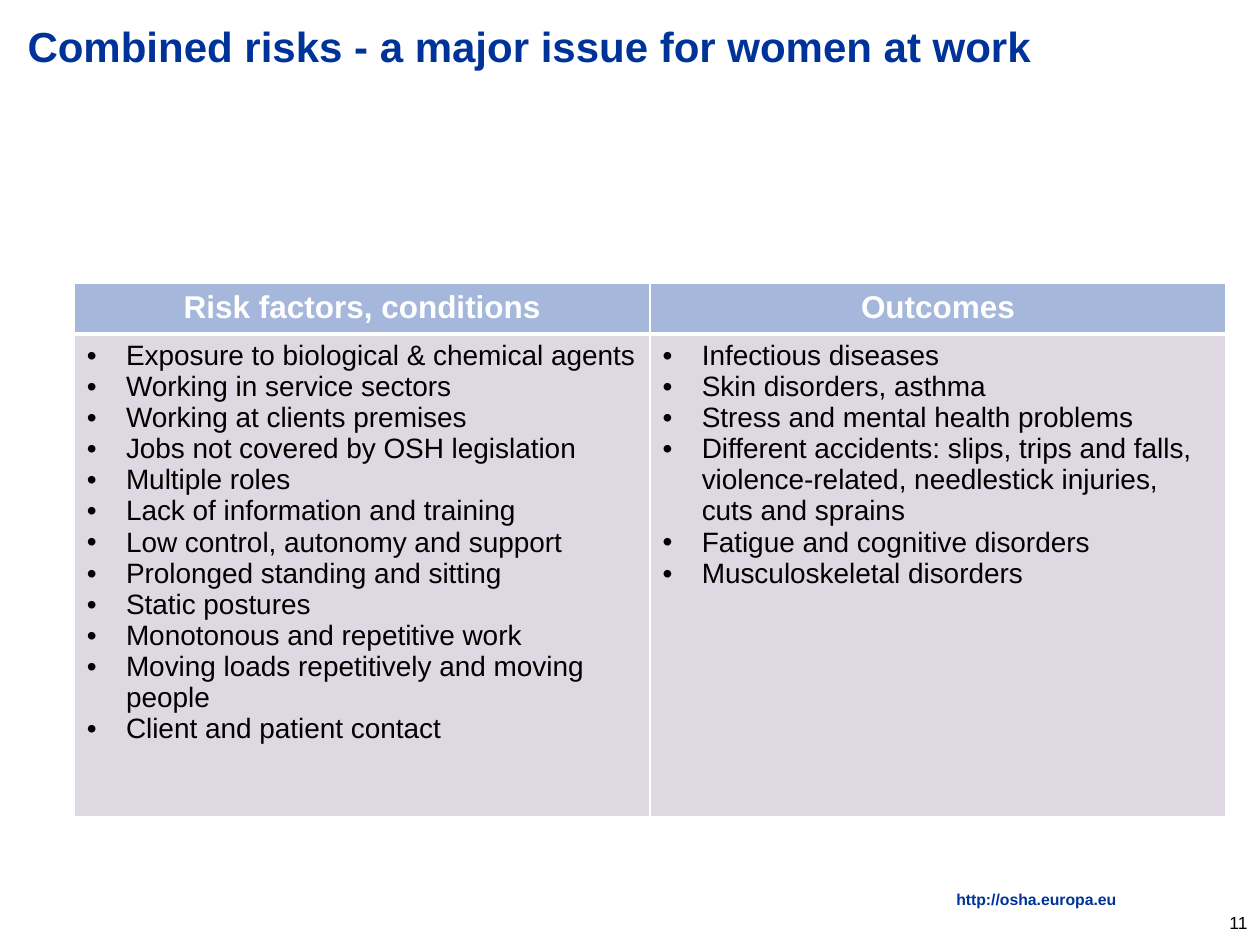
from lxml.etree import SubElement
from pptx import Presentation
from pptx.dml.color import RGBColor
from pptx.enum.text import MSO_ANCHOR, PP_ALIGN
from pptx.oxml.ns import qn
from pptx.util import Inches, Pt

NAVY = RGBColor(0x00, 0x33, 0x99)
BLACK = RGBColor(0, 0, 0)
WHITE = RGBColor(0xFF, 0xFF, 0xFF)
HEADER_BLUE = RGBColor(0xA5, 0xB8, 0xDB)
BODY_MAUVE = RGBColor(0xDD, 0xD8, 0xE1)

TITLE = "Combined risks - a major issue for women at work"
WEBSITE = "http://osha.europa.eu"
PAGE_NUMBER = "11"
COLUMNS = [
    ("Risk factors, conditions", [
        "Exposure to biological & chemical agents",
        "Working in service sectors",
        "Working at clients premises",
        "Jobs not covered by OSH legislation",
        "Multiple roles",
        "Lack of information and training",
        "Low control, autonomy and support",
        "Prolonged standing and sitting",
        "Static postures",
        "Monotonous and repetitive work",
        "Moving loads repetitively and moving people",
        "Client and patient contact",
    ]),
    ("Outcomes", [
        "Infectious diseases",
        "Skin disorders, asthma",
        "Stress and mental health problems",
        "Different accidents: slips, trips and falls, violence-related, "
        "needlestick injuries, cuts and sprains",
        "Fatigue and cognitive disorders",
        "Musculoskeletal disorders",
    ]),
]
COLUMN_WIDTH = 4.57
ROW_HEIGHTS = [0.4, 3.83]
BULLET_INDENT = Inches(0.31)


def style_runs(paragraph, size, color, bold=False):
    for run in paragraph.runs:
        run.font.name = "Arial"
        run.font.size = Pt(size)
        run.font.bold = bold
        run.font.color.rgb = color


def add_label(slide, box, text, size, color, bold=False, align=PP_ALIGN.LEFT,
              anchor=MSO_ANCHOR.MIDDLE):
    frame = slide.shapes.add_textbox(*map(Inches, box)).text_frame
    frame.text = text
    frame.word_wrap = True
    frame.vertical_anchor = anchor
    frame.paragraphs[0].alignment = align
    style_runs(frame.paragraphs[0], size, color, bold)
    return frame


def add_bullet(paragraph):
    properties = paragraph._p.get_or_add_pPr()
    properties.set("marL", str(BULLET_INDENT))
    properties.set("indent", str(-BULLET_INDENT))
    SubElement(properties, qn("a:buFont"), typeface="Arial")
    SubElement(properties, qn("a:buChar"), char="•")


def finish_cell(cell, fill, top, bottom):
    properties = cell._tc.get_or_add_tcPr()
    for side, width in (("L", 1), ("R", 1), ("T", top), ("B", bottom)):
        border = SubElement(properties, qn(f"a:ln{side}"), w=str(Pt(width)))
        line_fill = SubElement(border, qn("a:solidFill"))
        SubElement(line_fill, qn("a:srgbClr"), val=str(WHITE))
    cell.fill.solid()
    cell.fill.fore_color.rgb = fill


def add_risk_table(slide):
    table = slide.shapes.add_table(
        len(ROW_HEIGHTS), len(COLUMNS), Inches(0.59), Inches(2.25),
        Inches(COLUMN_WIDTH * len(COLUMNS)), Inches(sum(ROW_HEIGHTS))).table
    for row, height in zip(table.rows, ROW_HEIGHTS):
        row.height = Inches(height)
    for index, (heading, items) in enumerate(COLUMNS):
        table.columns[index].width = Inches(COLUMN_WIDTH)
        header, body = table.cell(0, index), table.cell(1, index)
        header.text_frame.text = heading
        header.text_frame.paragraphs[0].alignment = PP_ALIGN.CENTER
        style_runs(header.text_frame.paragraphs[0], 18, WHITE, bold=True)
        finish_cell(header, HEADER_BLUE, top=1, bottom=3)
        body.text_frame.text = "\n".join(items)
        for paragraph in body.text_frame.paragraphs:
            add_bullet(paragraph)
            style_runs(paragraph, 16, BLACK)
        finish_cell(body, BODY_MAUVE, top=3, bottom=1)


def main():
    deck = Presentation()
    deck.slide_width, deck.slide_height = Inches(10), Inches(7.5)
    slide = deck.slides.add_slide(deck.slide_layouts[6])
    website = add_label(slide, (2.48, 7.08, 6.38, 0.11), WEBSITE, 9, NAVY, True,
                        PP_ALIGN.RIGHT, MSO_ANCHOR.TOP)
    website.margin_left = website.margin_right = 0
    website.margin_top = website.margin_bottom = 0
    website.paragraphs[0].line_spacing = 0.9
    add_label(slide, (9.33, 7.12, 0.67, 0.4), PAGE_NUMBER, 10, BLACK,
              align=PP_ALIGN.RIGHT)
    add_label(slide, (0.12, 0.13, 9.69, 0.47), TITLE, 24, NAVY, True)
    add_risk_table(slide)
    deck.save("out.pptx")


if __name__ == "__main__":
    main()
